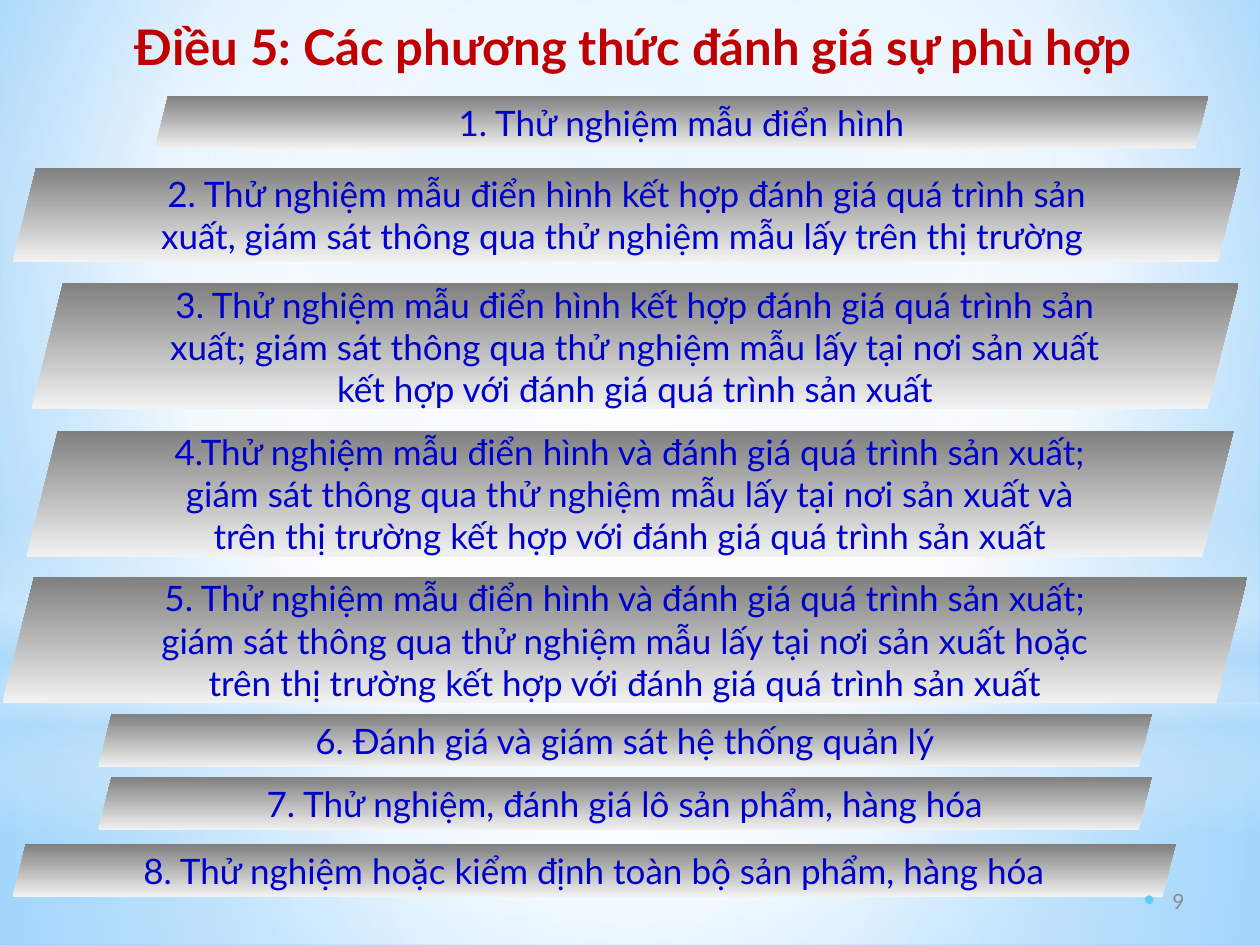
from lxml import etree
from pptx import Presentation
from pptx import util as u
from pptx.dml.color import RGBColor
from pptx.enum import shapes, text
from pptx.oxml.ns import qn

FONT = "Lato"
TEXT_BLUE = "0000CC"
CENTRE = (50, 50, 50, 50)
BAR_STOPS = [(0, "F2F2F2"), (100, "808080")]

# Left, top, width, height and wording of each method
METHODS = [
    (1.23, 0.76, 8.36, 0.42, "1. Thử nghiệm mẫu điển hình"),
    (0.1, 1.33, 9.75, 0.75,
     "2. Thử nghiệm mẫu điển hình kết hợp đánh giá quá trình sản xuất, "
     "giám sát thông qua thử nghiệm mẫu lấy trên thị trường "),
    (0.25, 2.25, 9.58, 1,
     "3. Thử nghiệm mẫu điển hình kết hợp đánh giá quá trình sản xuất; "
     "giám sát thông qua thử nghiệm mẫu lấy tại nơi sản xuất "
     "kết hợp với đánh giá quá trình sản xuất"),
    (0.21, 3.42, 9.58, 1,
     "4.Thử nghiệm mẫu điển hình và đánh giá quá trình sản xuất; "
     "giám sát thông qua thử nghiệm mẫu lấy tại nơi sản xuất và "
     "trên thị trường kết hợp với đánh giá quá trình sản xuất"),
    (0.02, 4.58, 9.88, 1,
     "5. Thử nghiệm mẫu điển hình và đánh giá quá trình sản xuất; "
     "giám sát thông qua thử nghiệm mẫu lấy tại nơi sản xuất hoặc "
     "trên thị trường kết hợp với đánh giá quá trình sản xuất"),
    (0.78, 5.67, 8.36, 0.42, "6. Đánh giá và giám sát hệ thống quản lý"),
    (0.78, 6.17, 8.36, 0.42, "7. Thử nghiệm, đánh giá lô sản phẩm, hàng hóa"),
    (0.1, 6.7, 9.23, 0.42,
     "8. Thử nghiệm hoặc kiểm định toàn bộ sản phẩm, hàng hóa"),
]


def colour(hex_value):
    return RGBColor.from_string(hex_value)


def set_gradient(owner, fill, stops, angle=None, focus=None):
    """Stops are (position, colour[, opacity]) in percent; focus is a fill-to rectangle."""
    fill.gradient()
    gradient = next(owner.element.iter(qn("a:gradFill")))
    for child in list(gradient):
        gradient.remove(child)
    stop_list = etree.SubElement(gradient, qn("a:gsLst"))
    for position, hex_value, *opacity in stops:
        stop = etree.SubElement(stop_list, qn("a:gs"), pos=str(position * 1000))
        tint = etree.SubElement(stop, qn("a:srgbClr"), val=hex_value)
        if opacity:
            etree.SubElement(tint, qn("a:alpha"), val=str(opacity[0] * 1000))
    if focus:
        circle = etree.SubElement(gradient, qn("a:path"), path="circle")
        sides = {side: str(value * 1000) for side, value in zip("ltrb", focus)}
        etree.SubElement(circle, qn("a:fillToRect"), **sides)
    else:
        etree.SubElement(gradient, qn("a:lin"), ang=str(angle * 60000), scaled="0")


def write(frame, wording, size, hex_value, bold=False,
          align=text.PP_ALIGN.CENTER, anchor=text.MSO_ANCHOR.MIDDLE):
    frame.word_wrap = True
    frame.auto_size = text.MSO_AUTO_SIZE.NONE
    frame.vertical_anchor = anchor
    paragraph = frame.paragraphs[0]
    paragraph.alignment = align
    run = paragraph.add_run()
    run.text = wording
    run.font.name, run.font.size, run.font.bold = FONT, u.Pt(size), bold
    run.font.color.rgb = colour(hex_value)
    return paragraph


def add_gradient_shape(slide, kind, box, stops, **direction):
    shape = slide.shapes.add_shape(kind, *map(u.Inches, box))
    shape.shadow.inherit = False
    shape.line.fill.background()
    set_gradient(shape, shape.fill, stops, **direction)
    return shape


def add_backdrop(slide):
    set_gradient(slide, slide.background.fill,
                 [(0, "9ED5FF"), (60, "FFFFFF"), (100, "5BB9FF")],
                 focus=(20, 10, 20, 60))
    rectangle, oval = shapes.MSO_SHAPE.RECTANGLE, shapes.MSO_SHAPE.OVAL
    # Soft lower and upper halves
    add_gradient_shape(slide, rectangle, (0, 5.58, 10, 1.92),
                       [(0, "FFFFFF", 91), (37, "FFFFFF", 76), (100, "B4DCFA", 79)],
                       focus=CENTRE)
    add_gradient_shape(slide, rectangle, (0, 0, 10, 5.58),
                       [(0, "FFFFFF", 89), (48, "FFFFFF", 62), (100, "B4DCFA", 79)],
                       focus=CENTRE)
    # Horizon band and central glow
    add_gradient_shape(slide, rectangle, (0, 4.12, 10, 2.5),
                       [(0, "FFFFFF", 0), (29, "FFFFFF", 30), (45, "B4DCFA", 40),
                        (55, "FFFFFF", 26), (65, "B4DCFA", 60), (100, "FFFFFF", 0)],
                       angle=90)
    add_gradient_shape(slide, oval, (0, 1.75, 10, 5.58),
                       [(0, "FFFFFF", 100), (56, "FFFFFF", 0)], focus=CENTRE)


def add_title(slide, wording):
    title = slide.shapes.title
    title.left, title.top, title.width, title.height = map(
        u.Inches, (0.4, 0.08, 9.25, 0.58))
    write(title.text_frame, wording, 28, "C00000", bold=True,
          anchor=text.MSO_ANCHOR.TOP)
    # Bring the title in front of the backdrop
    title.element.getparent().append(title.element)


def add_method(slide, *box, wording):
    bar = add_gradient_shape(slide, shapes.MSO_SHAPE.PARALLELOGRAM, box,
                             BAR_STOPS, angle=270)
    write(bar.text_frame, wording, 20, TEXT_BLUE)


def add_page_number(slide, number):
    box = slide.shapes.add_textbox(*map(u.Inches, (7.17, 6.95, 2.33, 0.4)))
    paragraph = write(box.text_frame, number, 12, "8C8C8C",
                      align=text.PP_ALIGN.RIGHT)
    # Small round bullet
    properties = paragraph._p.get_or_add_pPr()
    indent = u.Inches(0.23)
    properties.set("marL", str(indent))
    properties.set("indent", str(-indent))
    bullet_colour = etree.SubElement(properties, qn("a:buClr"))
    etree.SubElement(bullet_colour, qn("a:srgbClr"), val="5ECCF3")
    etree.SubElement(properties, qn("a:buSzPct"), val="70000")
    etree.SubElement(properties, qn("a:buChar"), char="●")


def main():
    deck = Presentation()
    deck.slide_width, deck.slide_height = u.Inches(10), u.Inches(7.5)
    slide = deck.slides.add_slide(deck.slide_layouts[5])
    add_backdrop(slide)
    add_title(slide, "Điều 5: Các phương thức đánh giá sự phù hợp")
    for *box, wording in METHODS:
        add_method(slide, *box, wording=wording)
    add_page_number(slide, "9")
    deck.save("out.pptx")


if __name__ == "__main__":
    main()
